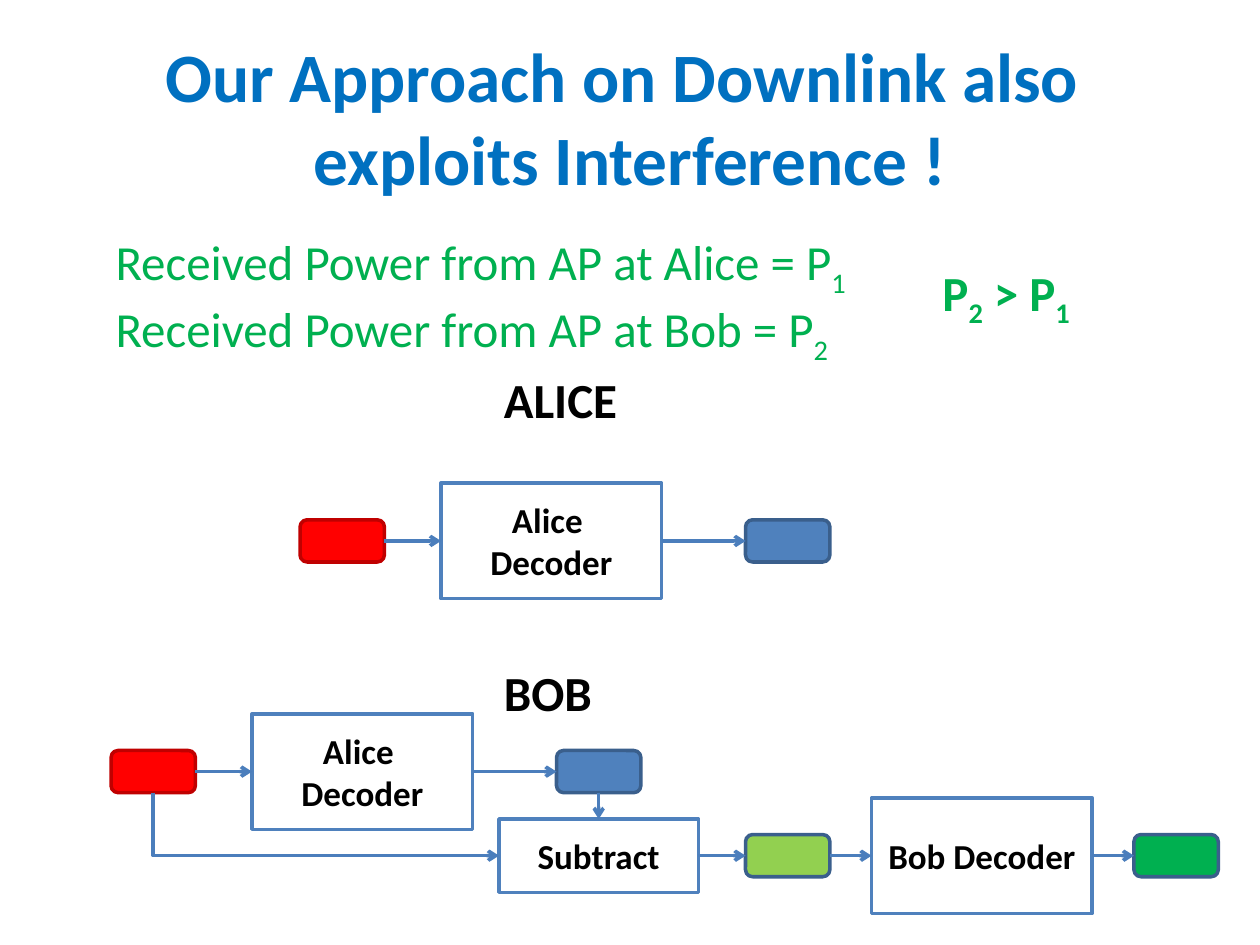
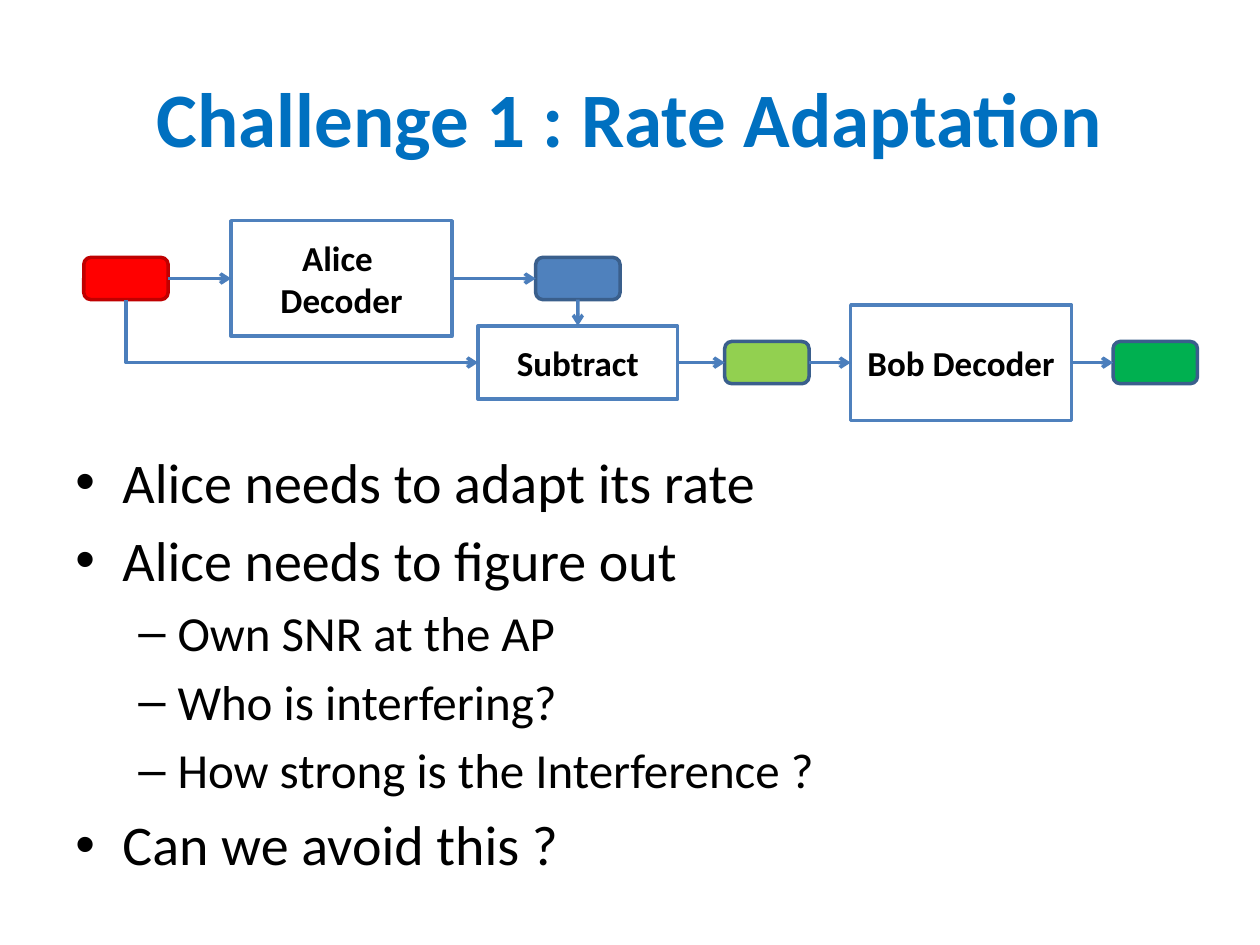
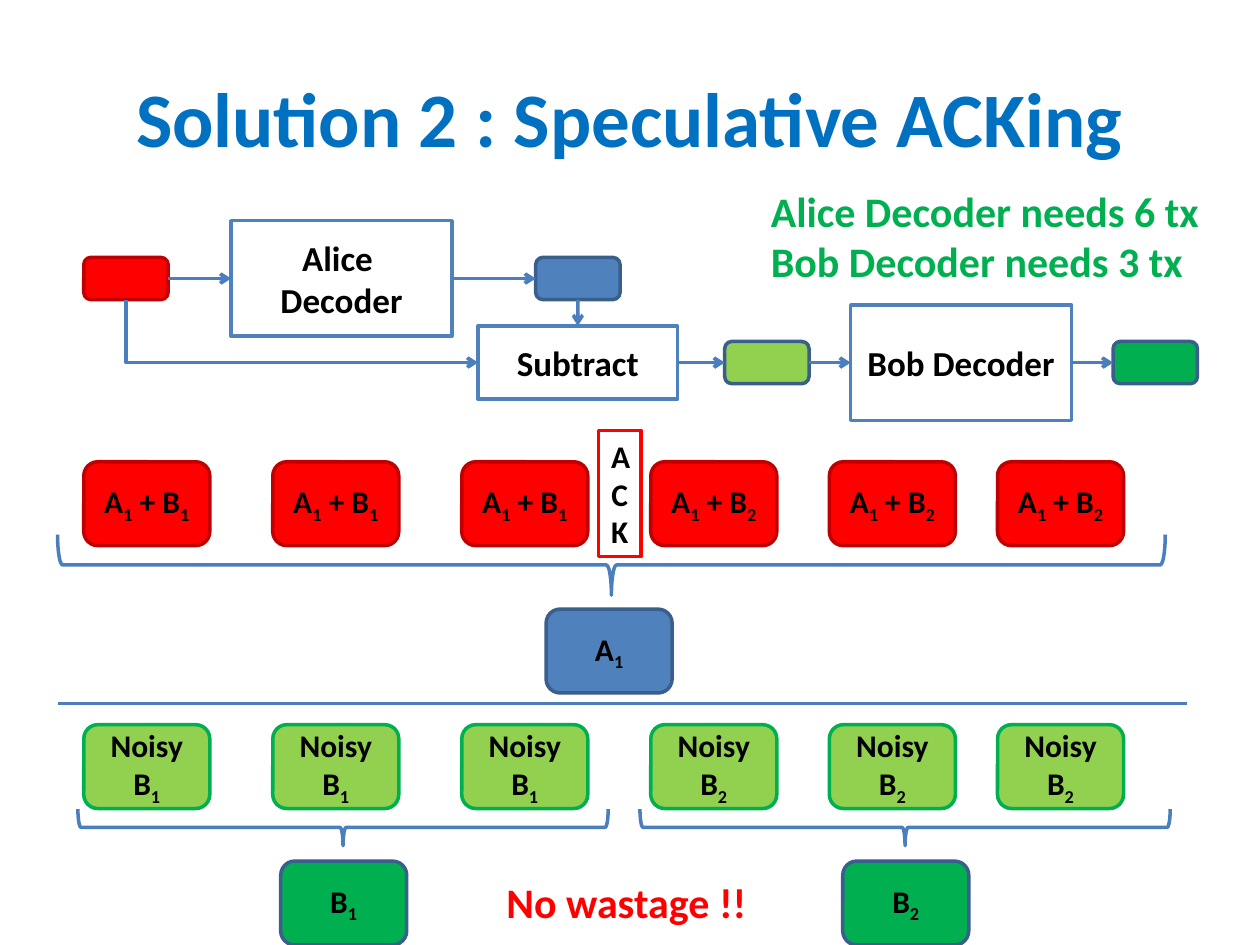
from lxml.etree import SubElement
from pptx import Presentation
from pptx.dml.color import RGBColor
from pptx.enum.shapes import MSO_CONNECTOR, MSO_SHAPE
from pptx.enum.text import MSO_ANCHOR, PP_ALIGN
from pptx.oxml.ns import qn
from pptx.util import Cm, Pt

BLACK = RGBColor(0x00, 0x00, 0x00)
WHITE = RGBColor(0xFF, 0xFF, 0xFF)
RED = RGBColor(0xFF, 0x00, 0x00)
DARK_RED = RGBColor(0xC0, 0x00, 0x00)
BLUE = RGBColor(0x4F, 0x81, 0xBD)
DARK_BLUE = RGBColor(0x3A, 0x5F, 0x8C)
LINE_BLUE = RGBColor(0x4B, 0x7E, 0xBC)
TITLE_BLUE = RGBColor(0x00, 0x70, 0xC0)
GREEN = RGBColor(0x00, 0xB0, 0x50)
LIGHT_GREEN = RGBColor(0x92, 0xD0, 0x50)

FONT = "Calibri"
LINE_WIDTH = Pt(2)
TOP, LEFT, BOTTOM, RIGHT = range(4)
DECODER_SIZE = (4.45, 2.33)
CHIP_SIZE = (1.7, 0.85)
PACKET_SIZE = (2.54, 1.69)
SUBTRACT_SIZE = (4.02, 1.48)
BULLETS = {0: ("•", 32, 0.95, -0.95), 1: ("–", 28, 2.06, -0.79)}


def write_text(para, text, *, size, color=BLACK, bold=False, align=PP_ALIGN.LEFT):
    """Write text in which an underscore makes the next character a subscript."""
    para.alignment = align

    def add_span(content, subscript=False):
        if not content:
            return
        span = para.add_run()
        span.text = content
        span.font.name = FONT
        span.font.size = Pt(size)
        span.font.bold = bold
        span.font.color.rgb = color
        if subscript:
            span.font._element.set("baseline", "-25000")

    for index, line in enumerate(text.split("\v")):
        if index:
            para.add_line_break()
        first, *others = line.split("_")
        add_span(first)
        for part in others:
            add_span(part[0], subscript=True)
            add_span(part[1:])


def add_titled_slide(deck, title, size=44):
    slide = deck.slides.add_slide(deck.slide_layouts[5])
    box = slide.shapes.title
    box.left, box.top, box.width, box.height = Cm(1.27), Cm(0.76), Cm(22.86), Cm(3.18)
    box.text_frame.vertical_anchor = MSO_ANCHOR.MIDDLE
    write_text(box.text_frame.paragraphs[0], title, size=size, color=TITLE_BLUE,
               bold=True, align=PP_ALIGN.CENTER)
    return slide


def add_label(slide, left, top, width, height, lines, **text_format):
    box = slide.shapes.add_textbox(Cm(left), Cm(top), Cm(width), Cm(height))
    frame = box.text_frame
    frame.word_wrap = False
    for index, line in enumerate(lines):
        para = frame.add_paragraph() if index else frame.paragraphs[0]
        write_text(para, line, **text_format)


def add_bullets(slide, left, top, width, height, items):
    box = slide.shapes.add_textbox(Cm(left), Cm(top), Cm(width), Cm(height))
    frame = box.text_frame
    frame.word_wrap = True
    for index, (level, text) in enumerate(items):
        symbol, size, margin, indent = BULLETS[level]
        para = frame.add_paragraph() if index else frame.paragraphs[0]
        para.level = level
        para.space_before = Pt(size * 0.2)
        write_text(para, text, size=size)
        properties = para._p.get_or_add_pPr()
        properties.set("marL", str(Cm(margin)))
        properties.set("indent", str(Cm(indent)))
        SubElement(properties, qn("a:buFont"), typeface="Arial")
        SubElement(properties, qn("a:buChar"), char=symbol)


def add_block(slide, left, top, size, text="", *, fill=WHITE, outline=BLUE,
              text_size=20, rounded=False):
    kind = MSO_SHAPE.ROUNDED_RECTANGLE if rounded else MSO_SHAPE.RECTANGLE
    width, height = size
    block = slide.shapes.add_shape(kind, Cm(left), Cm(top), Cm(width), Cm(height))
    block.shadow.inherit = False
    block.fill.solid()
    block.fill.fore_color.rgb = fill
    block.line.color.rgb = outline
    block.line.width = LINE_WIDTH
    if text:
        block.text_frame.vertical_anchor = MSO_ANCHOR.MIDDLE
        write_text(block.text_frame.paragraphs[0], text, size=text_size, bold=True,
                   align=PP_ALIGN.CENTER)
    return block


def add_centered(slide, left, axis, size, text="", **block_format):
    return add_block(slide, left, axis - size[1] / 2, size, text, **block_format)


def add_chip(slide, left, axis, fill, outline=DARK_BLUE):
    return add_centered(slide, left, axis, CHIP_SIZE, fill=fill, outline=outline,
                        rounded=True)


def add_packet(slide, left, top, text, fill, outline=DARK_BLUE):
    add_block(slide, left, top, PACKET_SIZE, text, fill=fill, outline=outline,
              text_size=18, rounded=True)


def style_connector(connector, arrow=True):
    connector.line.color.rgb = LINE_BLUE
    connector.line.width = LINE_WIDTH
    if arrow:
        SubElement(connector.line._get_or_add_ln(), qn("a:tailEnd"), type="arrow")
    SubElement(connector._element.spPr, qn("a:effectLst"))


def join(slide, start, start_side, end, end_side, kind=MSO_CONNECTOR.STRAIGHT):
    connector = slide.shapes.add_connector(kind, 0, 0, 0, 0)
    connector.begin_connect(start, start_side)
    connector.end_connect(end, end_side)
    style_connector(connector)
    return connector


def join_down_then_right(slide, start, end):
    connector = join(slide, start, BOTTOM, end, LEFT, MSO_CONNECTOR.ELBOW)
    left, top = connector.begin_x, connector.begin_y
    across, down = connector.end_x - left, connector.end_y - top
    connector.left = left + (across - down) // 2
    connector.top = top + (down - across) // 2
    connector.width, connector.height = down, across
    properties = connector._element.spPr
    frame = properties.find(qn("a:xfrm"))
    frame.set("rot", str(270 * 60000))
    frame.set("flipH", "1")
    properties.find(qn("a:prstGeom")).set("prst", "bentConnector2")


def add_rule(slide, left, top, width):
    rule = slide.shapes.add_connector(MSO_CONNECTOR.STRAIGHT, Cm(left), Cm(top),
                                      Cm(left + width), Cm(top))
    style_connector(rule, arrow=False)


def add_brace_below(slide, left, top, width, height):
    shift = (width - height) / 2
    brace = slide.shapes.add_shape(MSO_SHAPE.RIGHT_BRACE, Cm(left + shift),
                                   Cm(top - shift), Cm(height), Cm(width))
    brace.rotation = 90
    brace.shadow.inherit = False
    brace.fill.background()
    brace.line.color.rgb = LINE_BLUE
    brace.line.width = LINE_WIDTH


def add_alice_chain(slide, left, top, input_gap):
    axis = top + DECODER_SIZE[1] / 2
    received = add_chip(slide, left - input_gap - CHIP_SIZE[0], axis, RED, DARK_RED)
    decoder = add_centered(slide, left, axis, DECODER_SIZE, "Alice \vDecoder")
    decoded = add_chip(slide, left + 6.14, axis, BLUE)
    join(slide, received, RIGHT, decoder, LEFT)
    join(slide, decoder, RIGHT, decoded, LEFT)
    return received, decoded


def add_bob_chain(slide, left, top, input_gap=1.27):
    received, alice_signal = add_alice_chain(slide, left, top, input_gap)
    axis = top + 2.86
    subtract = add_centered(slide, left + 4.98, axis, SUBTRACT_SIZE, "Subtract")
    remainder = add_chip(slide, left + 9.95, axis, LIGHT_GREEN)
    decoder = add_centered(slide, left + 12.49, axis, DECODER_SIZE, "Bob Decoder")
    bob_signal = add_chip(slide, left + 17.78, axis, GREEN)
    join_down_then_right(slide, received, subtract)
    join(slide, alice_signal, BOTTOM, subtract, TOP)
    row = [subtract, remainder, decoder, bob_signal]
    for start, end in zip(row, row[1:]):
        join(slide, start, RIGHT, end, LEFT)


def build_downlink(deck):
    slide = add_titled_slide(
        deck, "Our Approach on Downlink also \vexploits Interference !", size=39.6)
    add_label(slide, 2.08, 4.55, 16.05, 2.64,
              ["Received Power from AP at Alice = P_1",
               "Received Power from AP at Bob = P_2"], size=28, color=GREEN)
    add_label(slide, 18.75, 5.16, 3.18, 1.45, ["P_2 > P_1"],
              size=28, color=GREEN, bold=True)
    add_label(slide, 9.91, 7.32, 2.82, 1.45, ["ALICE"], size=28, bold=True)
    add_alice_chain(slide, 8.89, 9.74, input_gap=1.14)
    add_label(slide, 9.91, 13.23, 2.31, 1.45, ["BOB"], size=28, bold=True)
    add_bob_chain(slide, 5.08, 14.39, input_gap=1.14)


def build_rate_adaptation(deck):
    slide = add_titled_slide(deck, "Challenge 1 : Rate Adaptation")
    add_bob_chain(slide, 4.66, 4.45)
    add_bullets(slide, 1.27, 8.89, 22.86, 9.8, [
        (0, "Alice needs to adapt its rate"),
        (0, "Alice needs to figure out"),
        (1, "Own SNR at the AP"),
        (1, "Who is interfering?"),
        (1, "How strong is the Interference ?"),
        (0, "Can we avoid this ?"),
    ])


def build_speculative_acking(deck):
    slide = add_titled_slide(deck, "Solution 2 : Speculative ACKing")
    add_bob_chain(slide, 4.66, 4.45)
    add_label(slide, 15.29, 3.61, 9.22, 2.31,
              ["Alice Decoder needs 6 tx", "Bob Decoder needs 3 tx"],
              size=24, color=GREEN, bold=True)
    for index, left in enumerate([1.69, 5.5, 9.31, 13.12, 16.72, 20.11]):
        bob_packet = f"B_{index // 3 + 1}"
        add_packet(slide, left, 9.31, f"A_1 + {bob_packet}", RED, DARK_RED)
        add_packet(slide, left, 14.61, f"Noisy {bob_packet}", LIGHT_GREEN, GREEN)
    add_brace_below(slide, 1.16, 10.78, 22.33, 1.22)
    add_block(slide, 12.07, 8.68, (0.85, 2.54), "ACK", outline=RED, text_size=18)
    add_packet(slide, 11.01, 12.28, "A_1", BLUE)
    add_rule(slide, 1.17, 14.18, 22.75)
    for left, text in [(1.57, "B_1"), (12.9, "B_2")]:
        add_brace_below(slide, left, 16.31, 10.69, 0.74)
        add_packet(slide, left + 4.09, 17.36, text, GREEN)
    add_label(slide, 9.96, 17.55, 5.41, 1.27, ["No wastage !!"],
              size=24, color=RED, bold=True)


def main():
    deck = Presentation()
    deck.slide_width, deck.slide_height = Cm(25.4), Cm(19.05)
    build_downlink(deck)
    build_rate_adaptation(deck)
    build_speculative_acking(deck)
    deck.save("out.pptx")


if __name__ == "__main__":
    main()
